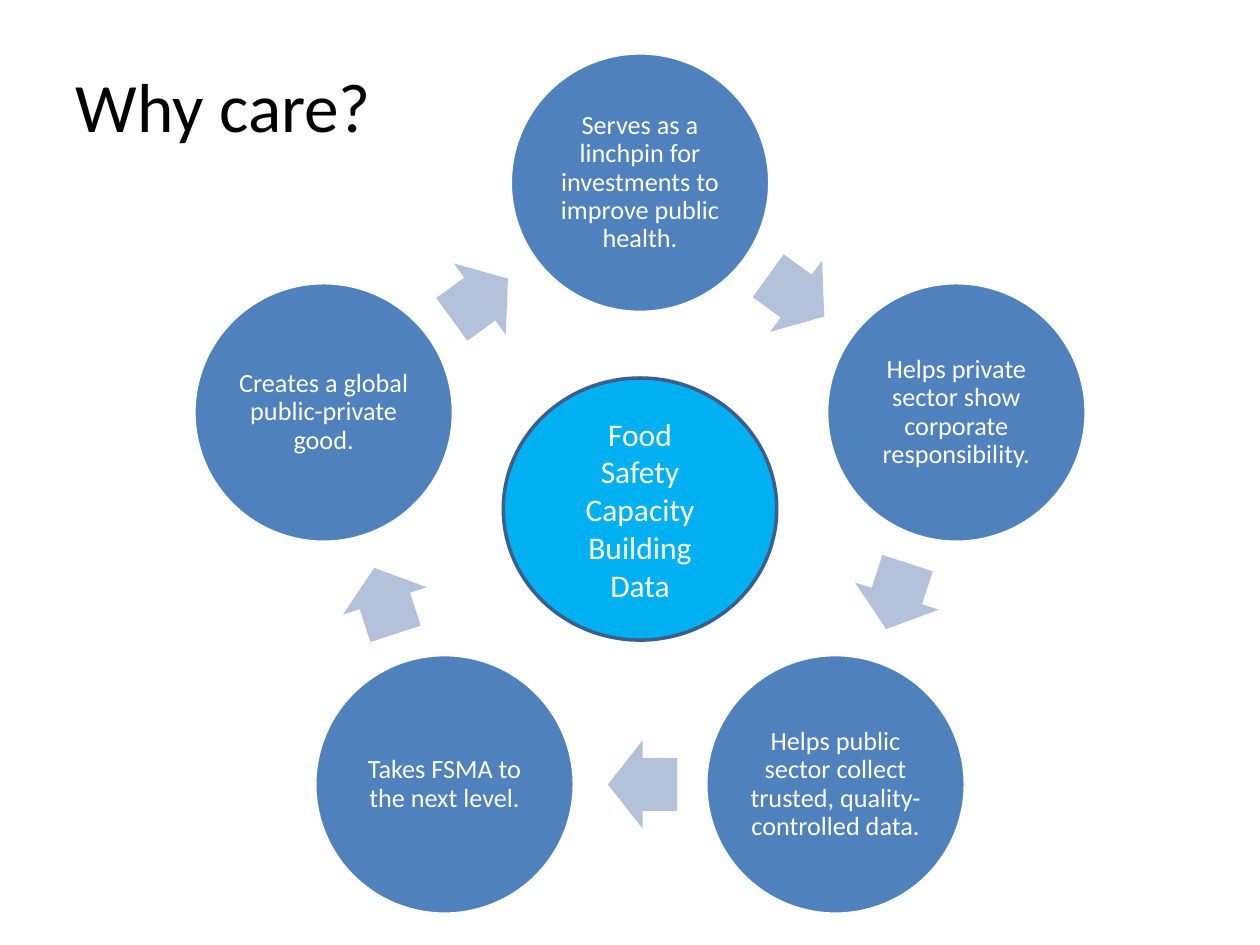
import math

import pptx
import pptx.dml.color
import pptx.enum.shapes
import pptx.enum.text
import pptx.util
from pptx.util import Inches

FONT = "Calibri"
WHITE = "FFFFFF"
BLUE = "4F81BD"
PALE_BLUE = "B3C1DB"
BRIGHT_BLUE = "00B0F0"
DARK_BLUE = "3A5F8C"

RING_X, RING_Y, RING_RADIUS = 5.08, 4.09, 2.64
CIRCLE_SIZE = 2.06
ARROW_LENGTH, ARROW_HEIGHT = 0.55, 0.7
ARROW_SETBACK = 0.02

REASONS = [
    "Serves as a linchpin for investments to improve public health.",
    "Helps private sector show corporate responsibility.",
    "Helps public sector collect trusted, quality-controlled data.",
    "Takes FSMA to the next level.",
    "Creates a global public-private good.",
]


def color(hex_string):
    return pptx.dml.color.RGBColor.from_string(hex_string)


def format_text(text_frame, size, hex_string, alignment, spacing=None):
    text_frame.word_wrap = True
    text_frame.vertical_anchor = pptx.enum.text.MSO_ANCHOR.MIDDLE
    for paragraph in text_frame.paragraphs:
        paragraph.alignment = alignment
        paragraph.line_spacing = spacing
        for run in paragraph.runs:
            run.font.name = FONT
            run.font.size = pptx.util.Pt(size)
            run.font.color.rgb = color(hex_string)


def add_centered_shape(slide, kind, x, y, width, height, fill):
    """Add a filled shape whose middle lies at x, y."""
    shape = slide.shapes.add_shape(
        kind, Inches(x - width / 2), Inches(y - height / 2),
        Inches(width), Inches(height))
    shape.shadow.inherit = False
    shape.fill.solid()
    shape.fill.fore_color.rgb = color(fill)
    shape.line.fill.background()
    return shape


def add_circle(slide, text, x, y, width, height, fill, line, size, spacing=None):
    circle = add_centered_shape(
        slide, pptx.enum.shapes.MSO_SHAPE.OVAL, x, y, width, height, fill)
    circle.line.color.rgb = color(line)
    circle.line.width = pptx.util.Pt(2)
    circle.text_frame.text = text
    format_text(circle.text_frame, size, WHITE,
                pptx.enum.text.PP_ALIGN.CENTER, spacing)
    return circle


def add_reason(slide, text, x, y):
    circle = add_circle(slide, text, x, y, CIRCLE_SIZE, CIRCLE_SIZE,
                        BLUE, WHITE, 15, 0.9)
    frame = circle.text_frame
    frame.margin_left = frame.margin_right = Inches(0.02)
    frame.margin_top = frame.margin_bottom = Inches(0.02)


def add_arrow(slide, start, end):
    """Add a block arrow halfway between two circle centres."""
    angle = math.atan2(end[1] - start[1], end[0] - start[0])
    x = (start[0] + end[0]) / 2 - ARROW_SETBACK * math.cos(angle)
    y = (start[1] + end[1]) / 2 - ARROW_SETBACK * math.sin(angle)
    arrow = add_centered_shape(
        slide, pptx.enum.shapes.MSO_SHAPE.RIGHT_ARROW, x, y,
        ARROW_LENGTH, ARROW_HEIGHT, PALE_BLUE)
    arrow.adjustments[0] = 0.6
    arrow.adjustments[1] = 0.5
    arrow.rotation = round(math.degrees(angle)) % 360


def add_cycle(slide):
    count = len(REASONS)
    angles = [2 * math.pi * index / count for index in range(count)]
    centers = [(RING_X + RING_RADIUS * math.sin(angle),
                RING_Y - RING_RADIUS * math.cos(angle)) for angle in angles]
    for index, (text, center) in enumerate(zip(REASONS, centers)):
        add_reason(slide, text, *center)
        add_arrow(slide, center, centers[(index + 1) % count])


def set_title(slide, text):
    title = slide.shapes.title
    title.left, title.top = Inches(0.5), Inches(0.48)
    title.width, title.height = Inches(9), Inches(0.7)
    title.text_frame.text = text
    format_text(title.text_frame, 39.6, "000000",
                pptx.enum.text.PP_ALIGN.LEFT)


def main():
    presentation = pptx.Presentation()
    presentation.slide_width = Inches(10)
    presentation.slide_height = Inches(7.5)
    slide = presentation.slides.add_slide(presentation.slide_layouts[5])
    set_title(slide, "Why care?")
    add_cycle(slide)
    add_circle(slide, "Food\vSafety Capacity Building Data",
               RING_X, 4.04, 2.17, 2.08, BRIGHT_BLUE, DARK_BLUE, 18)
    presentation.save("out.pptx")


if __name__ == "__main__":
    main()
